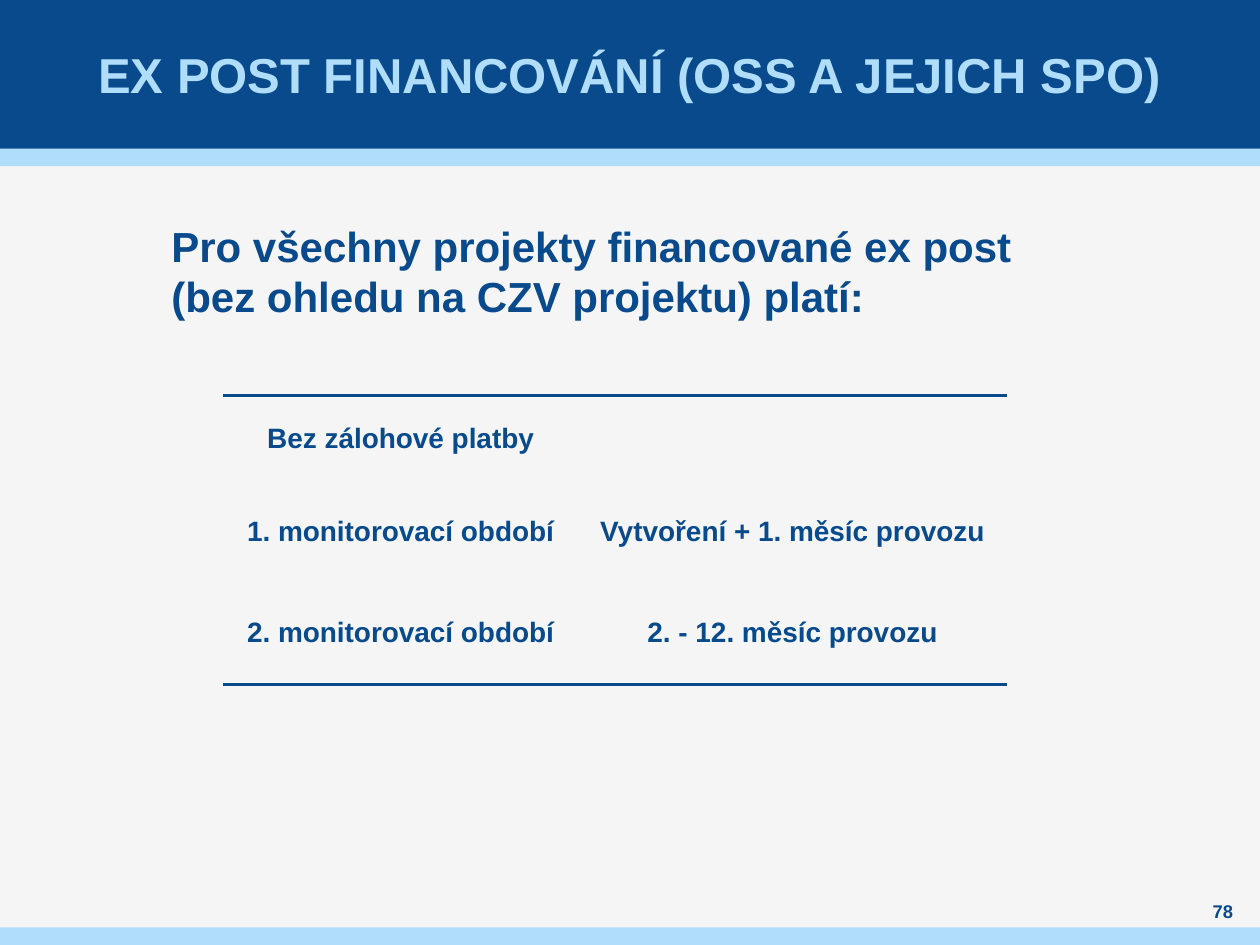
from lxml import etree
from pptx import Presentation
from pptx.dml.color import RGBColor
from pptx.enum.shapes import MSO_SHAPE as Shape
from pptx.enum.text import MSO_ANCHOR as Anchor, PP_ALIGN as Align
from pptx.oxml.ns import qn
from pptx.util import Inches, Pt

COLORS = {"navy": "084A8B", "sky": "AFDDFA", "paper": "F5F5F5"}
FONT = "Arial"
SLIDE_W, SLIDE_H = 10, 7.5
HEADER_H, STRIPE_H = 1.18, 0.14


class SlideBuilder:
    """Holds the style and the current slide."""

    def __init__(self, slide):
        self.slide = slide
        self.paint(slide.background.fill, "paper")

    def paint(self, fill, color):
        fill.solid()
        fill.fore_color.rgb = RGBColor.from_string(COLORS[color])

    def set_text(self, frame, text, size, color, align):
        line = frame.paragraphs[0]
        line.text = text
        line.alignment = align
        line.font.name, line.font.size, line.font.bold = FONT, Pt(size), True
        line.font.color.rgb = RGBColor.from_string(COLORS[color])
        return line

    def band(self, top, height, color):
        bar = self.slide.shapes.add_shape(
            Shape.RECTANGLE, 0, Inches(top), Inches(SLIDE_W), Inches(height))
        self.paint(bar.fill, color)
        bar.line.fill.background()
        bar.shadow.inherit = False

    def text(self, box, text, size, color="navy", align=Align.CENTER,
             anchor=Anchor.MIDDLE, side_inset=0):
        frame = self.slide.shapes.add_textbox(*map(Inches, box)).text_frame
        frame.word_wrap = True
        frame.vertical_anchor = anchor
        frame.margin_left = frame.margin_right = Inches(side_inset)
        frame.margin_top = frame.margin_bottom = 0
        return self.set_text(frame, text, size, color, align)

    def borders(self, cell, ruled):
        """Rule the given sides in navy and clear the others."""
        props = cell._tc.get_or_add_tcPr()
        for position, side in enumerate("LRTB"):
            border = etree.Element(qn(f"a:ln{side}"), w=str(Pt(2)))
            if side in ruled:
                fill = etree.SubElement(border, qn("a:solidFill"))
                etree.SubElement(fill, qn("a:srgbClr"), val=COLORS["navy"])
            else:
                etree.SubElement(border, qn("a:noFill"))
            props.insert(position, border)

    def table(self, left, top, widths, heights, rows, size):
        grid = self.slide.shapes.add_table(
            len(rows), len(widths), Inches(left), Inches(top),
            Inches(sum(widths)), Inches(sum(heights))).table
        for column, width in zip(grid.columns, widths):
            column.width = Inches(width)
        for r, (height, texts) in enumerate(zip(heights, rows)):
            grid.rows[r].height = Inches(height)
            ruled = ("T" if r == 0 else "") + ("B" if r == len(rows) - 1 else "")
            for c, text in enumerate(texts):
                cell = grid.cell(r, c)
                cell.vertical_anchor = Anchor.MIDDLE
                cell.margin_left = cell.margin_right = cell.margin_top = Inches(0.01)
                cell.margin_bottom = 0
                self.paint(cell.fill, "paper")
                self.borders(cell, ruled)
                self.set_text(cell.text_frame, text, size, "navy", Align.CENTER)


def main():
    deck = Presentation()
    deck.slide_width, deck.slide_height = Inches(SLIDE_W), Inches(SLIDE_H)
    page = SlideBuilder(deck.slides.add_slide(deck.slide_layouts[6]))

    # Header and footer bands
    page.band(HEADER_H, STRIPE_H, "sky")
    page.band(0, HEADER_H, "navy")
    page.band(SLIDE_H - STRIPE_H, STRIPE_H, "sky")

    # Title and page number
    page.text((0.39, 0, 9.21, HEADER_H), "EX POST FINANCOVÁNÍ (OSS A JEJICH SPO)",
              28, color="sky", side_inset=0.04)
    page.text((9.45, 7.13, 0.51, 0.2), "78", 10.5)

    # Introduction
    intro = page.text(
        (1.36, 1.75, 7.28, 0.82),
        "Pro všechny projekty financované ex post (bez ohledu na CZV projektu) platí:",
        24, align=Align.LEFT, anchor=Anchor.TOP)
    intro.line_spacing = Pt(28.8)
    intro.space_before = intro.space_after = Pt(6)

    # Monitoring periods
    periods = [
        ("Bez zálohové platby", ""),
        ("1. monitorovací období", "Vytvoření + 1. měsíc provozu"),
        ("2. monitorovací období", "2. - 12. měsíc provozu"),
    ]
    page.table(1.77, 3.14, (2.82, 3.4), (0.68, 0.79, 0.82), periods, 16)

    deck.save("out.pptx")


if __name__ == "__main__":
    main()
